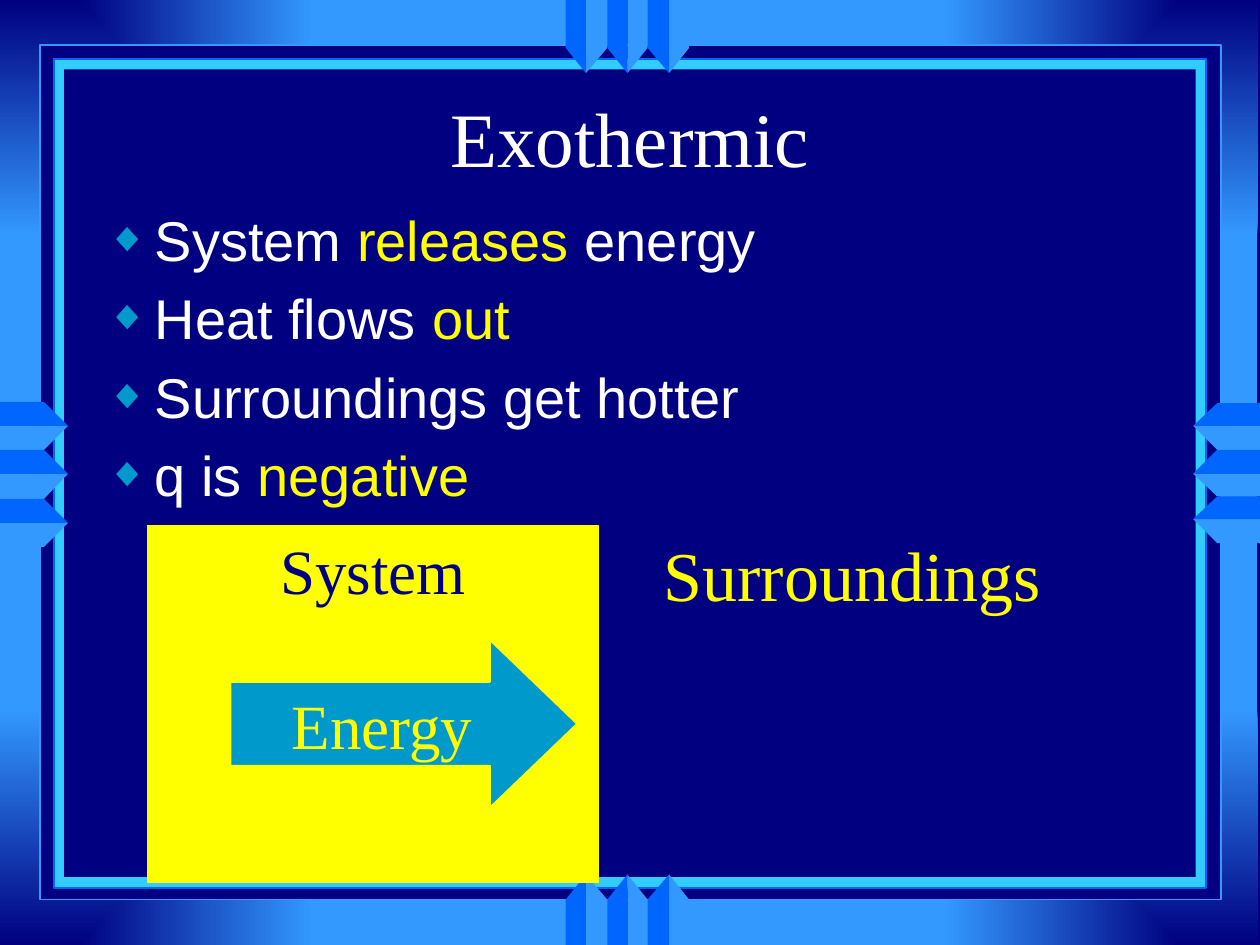
"""Build the Exothermic slide: a framed background, a bullet list and an energy diagram."""
from lxml.etree import SubElement
from pptx import Presentation
from pptx.dml.color import RGBColor
from pptx.enum.shapes import MSO_SHAPE
from pptx.enum.text import MSO_ANCHOR, PP_ALIGN
from pptx.oxml import parse_xml
from pptx.oxml.ns import nsdecls, qn
from pptx.util import Pt

PX = 9144
WIDTH, HEIGHT = 1000, 750
SERIF, SANS = "Times New Roman", "Arial"
COLORS = {
    "navy": "000080", "sky": "3399FF", "blue": "0066FF", "cyan": "33CCFF",
    "teal": "0099CC", "yellow": "FFFF00", "white": "FFFFFF",
}

FRAMES = [
    ((32, 36, 937, 678), "navy", "sky"),
    ((43, 47, 914, 658), "cyan", "blue"),
    ((51, 55, 898, 641), "navy", None),
]
SPIKE_ROWS = [
    {"span": (449, 547), "depths": (0, 38, 58), "upright": True},
    {"span": (449, 547), "depths": (750, 714, 694), "upright": True},
    {"span": (319, 434), "depths": (0, 35, 54), "upright": False},
    {"span": (320, 431), "depths": (1000, 966, 947), "upright": False},
]
SPIKES_PER_ROW = 3

TITLE = [[("Exothermic", "white")]]
BULLETS = [
    [("System", "white"), (" releases ", "yellow"), ("energy", "white")],
    [("Heat flows ", "white"), ("out", "yellow")],
    [("Surroundings get hotter", "white")],
    [("q is ", "white"), ("negative", "yellow")],
]
SYSTEM = [[("System", "navy")]]
SURROUNDINGS = [[("Surroundings", "yellow")]]
ENERGY = [[("Energy", "yellow")]]


def rgb(name):
    return RGBColor.from_string(COLORS[name])


def paint(shape, fill=None, line=None):
    shape.shadow.inherit = False
    if fill:
        shape.fill.solid()
        shape.fill.fore_color.rgb = rgb(fill)
    if line:
        shape.line.color.rgb = rgb(line)
        shape.line.width = Pt(1)
    else:
        shape.line.fill.background()


def add_box(slide, box, fill=None, line=None, kind=MSO_SHAPE.RECTANGLE):
    shape = slide.shapes.add_shape(kind, *(length * PX for length in box))
    paint(shape, fill, line)
    return shape


def add_textbox(slide, box):
    return slide.shapes.add_textbox(*(length * PX for length in box))


def add_corner_glow(slide, right, bottom):
    half_width, half_height = WIDTH // 2, HEIGHT // 2
    box = (right * half_width, bottom * half_height, half_width - 2, half_height)
    shape = add_box(slide, box)
    focus = {"l": right, "t": bottom, "r": 1 - right, "b": 1 - bottom}
    edges = " ".join(f'{side}="{share * 100000}"' for side, share in focus.items())
    stops = "".join(
        f'<a:gs pos="{position}"><a:srgbClr val="{COLORS[name]}"/></a:gs>'
        for position, name in [(0, "navy"), (100000, "sky")]
    )
    gradient = parse_xml(
        f'<a:gradFill {nsdecls("a")} rotWithShape="0"><a:gsLst>{stops}</a:gsLst>'
        f'<a:path path="rect"><a:fillToRect {edges}/></a:path></a:gradFill>'
    )
    shape._element.spPr.find(qn("a:prstGeom")).addnext(gradient)


def add_spike_row(slide, span, depths, upright):
    start, end = span
    base, shoulder, point = depths
    step = (end - start) / (2 * SPIKES_PER_ROW)
    for index in range(SPIKES_PER_ROW):
        tip = start + (2 * index + 1) * step
        for edge, color in [(tip + step, "sky"), (tip - step, "blue")]:
            corners = [(edge, base), (edge, shoulder), (tip, point), (tip, base)]
            if not upright:
                corners = [(depth, along) for along, depth in corners]
            builder = slide.shapes.build_freeform(*corners[0], scale=PX)
            builder.add_line_segments(corners[1:], close=True)
            paint(builder.convert_to_shape(), color)


def write_text(shape, paragraphs, size, font=SERIF, align=PP_ALIGN.LEFT,
               anchor=MSO_ANCHOR.TOP, wrap=True, space_before=0, bullet=None):
    frame = shape.text_frame
    frame.word_wrap = wrap
    frame.vertical_anchor = anchor
    for index, runs in enumerate(paragraphs):
        paragraph = frame.add_paragraph() if index else frame.paragraphs[0]
        paragraph.alignment = align
        properties = paragraph._p.get_or_add_pPr()
        if space_before:
            spacing = SubElement(properties, qn("a:spcBef"))
            SubElement(spacing, qn("a:spcPct"), val=str(space_before * 1000))
        if bullet:
            properties.set("marL", str(38 * PX))
            properties.set("indent", str(-38 * PX))
            color = SubElement(properties, qn("a:buClr"))
            SubElement(color, qn("a:srgbClr"), val=COLORS["teal"])
            SubElement(properties, qn("a:buSzPct"), val="75000")
            SubElement(properties, qn("a:buFont"), typeface=font)
            SubElement(properties, qn("a:buChar"), char=bullet)
        for text, color_name in runs:
            run = paragraph.add_run()
            run.text = text
            run.font.size = Pt(size)
            run.font.name = font
            run.font.color.rgb = rgb(color_name)


def main():
    presentation = Presentation()
    presentation.slide_width = WIDTH * PX
    presentation.slide_height = HEIGHT * PX
    slide = presentation.slides.add_slide(presentation.slide_layouts[6])
    slide.background.fill.solid()
    slide.background.fill.fore_color.rgb = rgb("navy")

    for right in (0, 1):
        for bottom in (0, 1):
            add_corner_glow(slide, right, bottom)
    for box, fill, line in FRAMES:
        add_box(slide, box, fill, line)
    for row in SPIKE_ROWS:
        add_spike_row(slide, **row)

    title = add_textbox(slide, (75, 58, 850, 92))
    write_text(title, TITLE, 44, align=PP_ALIGN.CENTER, anchor=MSO_ANCHOR.BOTTOM)
    body = add_textbox(slide, (75, 158, 850, 533))
    write_text(body, BULLETS, 32, font=SANS, space_before=20, bullet="◆")

    system = add_box(slide, (117, 417, 358, 283), "yellow", "yellow")
    write_text(system, SYSTEM, 36, align=PP_ALIGN.CENTER, wrap=False)
    surroundings = add_textbox(slide, (517, 417, 400, 77))
    write_text(surroundings, SURROUNDINGS, 40, space_before=50)
    arrow = add_box(slide, (183, 508, 275, 133), "teal", "yellow", MSO_SHAPE.RIGHT_ARROW)
    arrow.adjustments[0], arrow.adjustments[1] = 0.5, 0.52
    write_text(arrow, ENERGY, 36, align=PP_ALIGN.CENTER, anchor=MSO_ANCHOR.MIDDLE, wrap=False)

    presentation.save("out.pptx")


if __name__ == "__main__":
    main()
